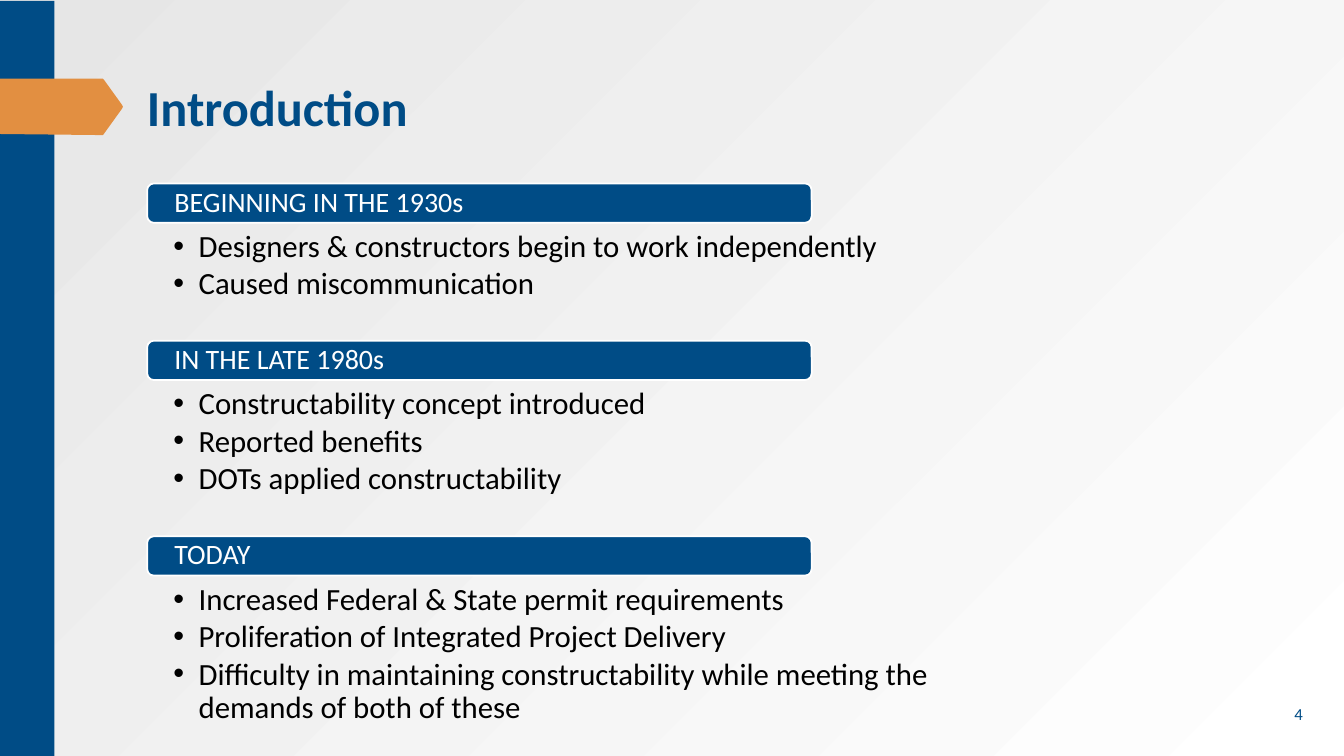
from lxml import etree
from pptx import Presentation
from pptx.dml.color import RGBColor
from pptx.enum.shapes import MSO_SHAPE as SHAPE
from pptx.enum.text import MSO_ANCHOR as ANCHOR, PP_ALIGN as ALIGN
from pptx.oxml.ns import qn
from pptx.util import Inches, Pt

BLUE = RGBColor(0x00, 0x4C, 0x86)
ORANGE = RGBColor(0xE2, 0x8F, 0x41)
WHITE = RGBColor(0xFF, 0xFF, 0xFF)
GREY = RGBColor(0xE6, 0xE6, 0xE6)
BLACK = RGBColor(0x00, 0x00, 0x00)
FONT = "Calibri"

ARROW = [(-0.01, 0.78), (1.02, 0.78), (1.03, 0.79), (1.21, 1.04), (1.22, 1.06),
         (1.21, 1.08), (1.03, 1.33), (1.02, 1.34), (0.95, 1.34), (-0.01, 1.33)]
SECTIONS = [
    (1.82, 1.16, "BEGINNING IN THE 1930s", [
        "Designers & constructors begin to work independently",
        "Caused miscommunication"]),
    (3.38, 1.53, "IN THE LATE 1980s", [
        "Constructability concept introduced",
        "Reported benefits",
        "DOTs applied constructability"]),
    (5.32, 1.86, "TODAY", [
        "Increased Federal & State permit requirements",
        "Proliferation of Integrated Project Delivery",
        "Difficulty in maintaining constructability while meeting the "
        "demands of both of these"]),
]


def set_background(s):
    """Fill the slide with a radial gradient centred on the bottom right corner."""
    fill = s.background.fill
    fill.gradient()
    for stop, color in zip(fill.gradient_stops, (WHITE, GREY)):
        stop.color.rgb = color
    grad = s.element.find(".//" + qn("a:gradFill"))
    lin = grad.find(qn("a:lin"))
    radial = etree.Element(qn("a:path"), path="circle")
    etree.SubElement(radial, qn("a:fillToRect"), l="100000", t="100000")
    grad.replace(lin, radial)


def paint(sp, color):
    """Give a shape a flat fill without line or shadow."""
    sp.shadow.inherit = False
    sp.fill.solid()
    sp.fill.fore_color.rgb = color
    sp.line.fill.background()


def add_block(s, kind, left, top, width, height, color):
    """Add a flat preset shape."""
    sp = s.shapes.add_shape(kind, Inches(left), Inches(top), Inches(width), Inches(height))
    paint(sp, color)
    return sp


def add_arrow(s):
    """Add the orange pointer beside the title."""
    points = [(Inches(x), Inches(y)) for x, y in ARROW]
    builder = s.shapes.build_freeform(*points[0])
    builder.add_line_segments(points[1:], close=True)
    paint(builder.convert_to_shape(), ORANGE)


def set_text(tf, lines, size, color, margins=(0.1, 0.05, 0.1, 0.05), bold=False):
    """Write and format the paragraphs of a text frame."""
    tf.word_wrap = True
    tf.margin_left, tf.margin_top, tf.margin_right, tf.margin_bottom = map(Inches, margins)
    tf.text = "\n".join(lines)
    for p in tf.paragraphs:
        p.alignment = ALIGN.LEFT
        for r in p.runs:
            r.font.name = FONT
            r.font.size = Pt(size)
            r.font.bold = bold
            r.font.color.rgb = color


def add_text(s, left, top, width, height, *args, **kwargs):
    """Add a text box and return its text frame."""
    box = s.shapes.add_textbox(Inches(left), Inches(top), Inches(width), Inches(height))
    set_text(box.text_frame, *args, **kwargs)
    return box.text_frame


def set_bullet(p):
    """Turn a paragraph into a bullet with a hanging indent."""
    p.line_spacing = 0.9
    p.space_after = Pt(3)
    pPr = p._p.get_or_add_pPr()
    pPr.set("marL", str(Inches(0.25)))
    pPr.set("indent", str(-Inches(0.25)))
    etree.SubElement(pPr, qn("a:buFont"), typeface="Arial")
    etree.SubElement(pPr, qn("a:buChar"), char="•")


def add_section(s, top, height, heading, bullets):
    """Add a heading bar with its bullet list."""
    tf = add_text(s, 0.99, top + 0.2, 9.42, height, bullets, 22, BLACK,
                  margins=(0.73, 0.27, 0.73, 0.17))
    for p in tf.paragraphs:
        set_bullet(p)
    bar = add_block(s, SHAPE.ROUNDED_RECTANGLE, 1.46, top, 6.59, 0.39, BLUE)
    bar.line.color.rgb = WHITE
    bar.line.width = Pt(1.25)
    set_text(bar.text_frame, [heading], 20, WHITE, margins=(0.25, 0, 0.25, 0))
    bar.text_frame.vertical_anchor = ANCHOR.MIDDLE
    bar.text_frame.paragraphs[0].line_spacing = 0.9


def main():
    """Build the slide and save it."""
    prs = Presentation()
    prs.slide_width, prs.slide_height = Inches(13.33), Inches(7.5)
    s = prs.slides.add_slide(prs.slide_layouts[6])
    set_background(s)
    add_block(s, SHAPE.RECTANGLE, 0, 0.01, 0.54, 7.5, BLUE)
    add_arrow(s)
    add_text(s, 1.36, 0.71, 11.23, 1.25, ["Introduction"], 36, BLUE, bold=True)
    for section in SECTIONS:
        add_section(s, *section)
    tf = add_text(s, 12.6, 6.88, 0.56, 0.4, ["4"], 12, BLUE)
    tf.vertical_anchor = ANCHOR.MIDDLE
    tf.paragraphs[0].alignment = ALIGN.CENTER
    prs.save("out.pptx")


if __name__ == "__main__":
    main()
